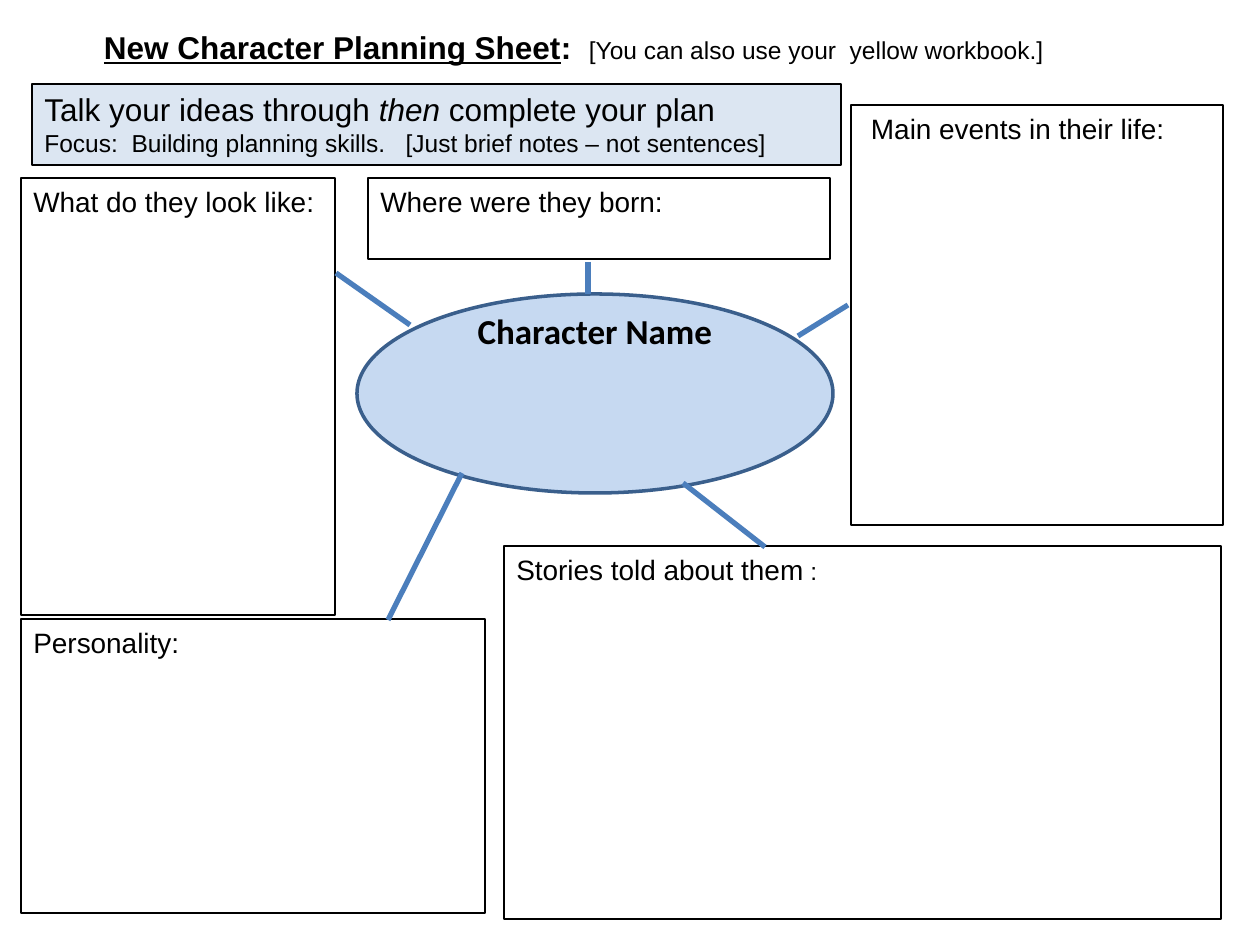
from pptx import Presentation
from pptx.dml.color import RGBColor
from pptx.enum.shapes import MSO_CONNECTOR, MSO_SHAPE
from pptx.enum.text import MSO_ANCHOR, MSO_AUTO_SIZE, PP_ALIGN
from pptx.oxml.ns import qn
from pptx.util import Pt
from lxml import etree

BLACK = RGBColor(0, 0, 0)
WHITE = RGBColor(255, 255, 255)
PALE_BLUE = RGBColor(0xDC, 0xE6, 0xF2)
OVAL_BLUE = RGBColor(0xC6, 0xD9, 0xF1)
OVAL_EDGE = RGBColor(0x3A, 0x5F, 0x8C)
LINK_BLUE = RGBColor(0x4B, 0x7E, 0xBC)
SCALE = 914400 / 126  # EMU per px


def px(*lengths):
    return [round(n * SCALE) for n in lengths]


def add_run(p, text, size, font="Arial", bold=False, italic=False, underline=False):
    r = p.add_run()
    r.text = text
    r.font.size = Pt(size)
    r.font.name = font
    r.font.bold = bold
    r.font.italic = italic
    r.font.underline = underline
    r.font.color.rgb = BLACK


prs = Presentation()
prs.slide_width, prs.slide_height = px(1260, 945)
s = prs.slides.add_slide(prs.slide_layouts[5])

# Title
title = s.shapes.title
title.left, title.top, title.width, title.height = px(57, 22, 1022, 50)
tf = title.text_frame
tf.auto_size = MSO_AUTO_SIZE.NONE
tf.vertical_anchor = MSO_ANCHOR.TOP
tf.margin_left = px(47)[0]
p = tf.paragraphs[0]
p.alignment = PP_ALIGN.LEFT
add_run(p, "New Character Planning Sheet", 18, bold=True, underline=True)
add_run(p, ":  ", 18, bold=True)
add_run(p, "[You can also use your  yellow workbook.]", 14)

# Instruction banner, character oval and note boxes
RECT, OVAL = MSO_SHAPE.RECTANGLE, MSO_SHAPE.OVAL
frames = {}
for key, kind, box, fill, edge, weight in [
    ("banner", RECT, (32, 84, 809, 81), PALE_BLUE, BLACK, 0.75),
    ("oval", OVAL, (357, 294, 476, 199), OVAL_BLUE, OVAL_EDGE, 2),
    ("Stories told about them", RECT, (504, 546, 717, 373), WHITE, BLACK, 0.75),
    ("Main events in their life:", RECT, (851, 105, 372, 420), WHITE, BLACK, 0.75),
    ("Personality:", RECT, (21, 619, 464, 294), WHITE, BLACK, 0.75),
    ("Where were they born:", RECT, (368, 178, 462, 81), WHITE, BLACK, 0.75),
    ("What do they look like:", RECT, (21, 178, 314, 437), WHITE, BLACK, 0.75),
]:
    sp = s.shapes.add_shape(kind, *px(*box))
    sp.shadow.inherit = False
    sp.fill.solid()
    sp.fill.fore_color.rgb = fill
    sp.line.color.rgb = edge
    sp.line.width = Pt(weight)
    tf = sp.text_frame
    tf.word_wrap = True
    tf.vertical_anchor = MSO_ANCHOR.TOP
    tf.paragraphs[0].alignment = PP_ALIGN.LEFT
    if fill == WHITE:
        add_run(tf.paragraphs[0], key, 16)
    frames[key] = tf

# Banner wording
tf = frames["banner"]
p = tf.paragraphs[0]
add_run(p, "Talk your ideas through ", 18)
add_run(p, "then", 18, italic=True)
add_run(p, " complete your plan", 18)
p = tf.add_paragraph()
p.alignment = PP_ALIGN.LEFT
add_run(p, "Focus:  Building planning skills.   [Just brief notes – not sentences]", 14)

# Name sits high in the oval, leaving room to write below
tf = frames["oval"]
tf.vertical_anchor = MSO_ANCHOR.MIDDLE
tf.margin_top, tf.margin_bottom = px(0, 125)
p = tf.paragraphs[0]
p.alignment = PP_ALIGN.CENTER
add_run(p, "Character Name", 20, font="Calibri", bold=True)

# Box details
add_run(frames["Stories told about them"].paragraphs[0], " :", 14)
frames["Main events in their life:"].margin_left = px(20)[0]

# Links between the oval and the boxes
for ends in [
    (462, 473, 388, 620),  # personality
    (848, 305, 798, 336),  # main events
    (765, 547, 683, 483),  # stories
    (588, 262, 588, 294),  # birthplace
    (410, 325, 336, 273),  # looks
]:
    link = s.shapes.add_connector(MSO_CONNECTOR.STRAIGHT, *px(*ends))
    link.line.color.rgb = LINK_BLUE
    link.line.width = Pt(3)
    etree.SubElement(link._element.spPr, qn("a:effectLst"))

prs.save("out.pptx")
